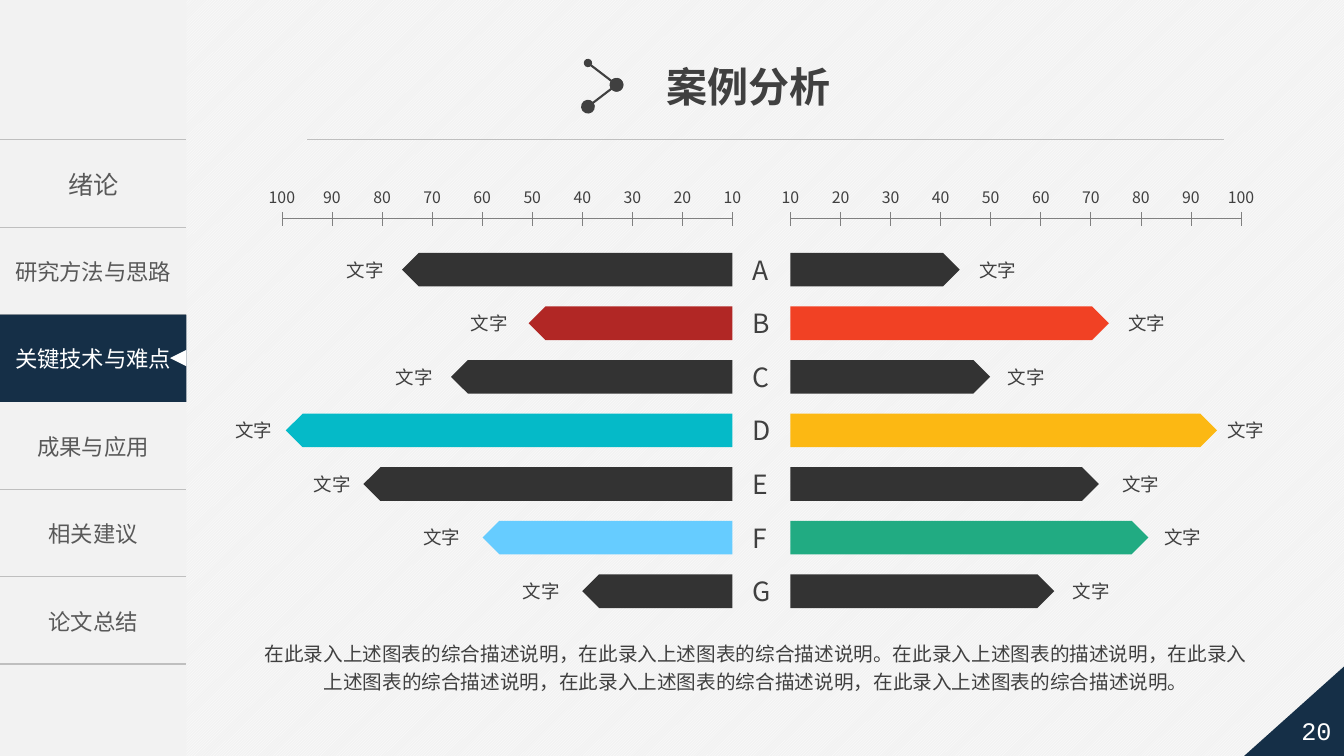
import lxml.etree
import pptx
import pptx.dml.color
import pptx.enum.dml
import pptx.enum.shapes
import pptx.enum.text
import pptx.oxml.ns
import pptx.util

SHAPES = pptx.enum.shapes.MSO_SHAPE
ALIGN = pptx.enum.text.PP_ALIGN
MIDDLE = pptx.enum.text.MSO_ANCHOR.MIDDLE
qn = pptx.oxml.ns.qn


def color(value):
    return pptx.dml.color.RGBColor.from_string(value)


class SlideBuilder:
    columns, rows = 160, 90
    font = "Noto Sans CJK SC"
    ink, gray, rule, navy = "404040", "595959", "BFBFBF", "152F47"

    def __init__(self, presentation):
        self.presentation = presentation
        self.slide = presentation.slides.add_slide(presentation.slide_layouts[6])

    def x(self, columns):
        return round(self.presentation.slide_width * columns / self.columns)

    def y(self, rows):
        return round(self.presentation.slide_height * rows / self.rows)

    def box(self, left, top, width, height):
        return self.x(left), self.y(top), self.x(width), self.y(height)

    def background(self, foreground, base):
        fill = self.slide.background.fill
        fill.patterned()
        fill.pattern = pptx.enum.dml.MSO_PATTERN.LIGHT_UPWARD_DIAGONAL
        fill.fore_color.rgb = color(foreground)
        fill.back_color.rgb = color(base)

    def set_text(self, frame, text, size, ink=None, font=None, bold=False, align=ALIGN.CENTER):
        frame.text = text
        paragraph = frame.paragraphs[0]
        paragraph.alignment = align
        run = paragraph.runs[0]
        run.font.size = pptx.util.Pt(size)
        run.font.bold = bold
        run.font.name = font or self.font
        run.font.color.rgb = color(ink or self.ink)
        east_asian = lxml.etree.SubElement(run.font._element, qn("a:ea"))
        east_asian.set("typeface", self.font)
        return paragraph

    def text(self, area, text, size, wrap=False, **style):
        frame = self.slide.shapes.add_textbox(*self.box(*area)).text_frame
        frame.word_wrap = wrap
        frame.vertical_anchor = MIDDLE
        return self.set_text(frame, text, size, **style)

    def shape(self, kind, area, fill=None, flip=False, rotation=0):
        shape = self.slide.shapes.add_shape(kind, *self.box(*area))
        shape.shadow.inherit = False
        shape.line.fill.background()
        shape.rotation = rotation
        if fill:
            shape.fill.solid()
            shape.fill.fore_color.rgb = color(fill)
        else:
            shape.fill.background()
        if flip:
            shape.element.spPr.get_or_add_xfrm().set("flipH", "1")
        return shape

    def label(self, shape, text, size, font=None):
        frame = shape.text_frame
        frame.margin_left = frame.margin_right = 0
        frame.vertical_anchor = MIDDLE
        self.set_text(frame, text, size, "FFFFFF", font)

    def line(self, start, end, ink, width, ovals=()):
        connector = self.slide.shapes.add_connector(
            pptx.enum.shapes.MSO_CONNECTOR.STRAIGHT,
            self.x(start[0]), self.y(start[1]), self.x(end[0]), self.y(end[1]))
        connector.line.color.rgb = color(ink)
        connector.line.width = pptx.util.Pt(width)
        properties = connector.element.spPr
        for tag, size in zip(("a:headEnd", "a:tailEnd"), ovals):
            lxml.etree.SubElement(properties.find(qn("a:ln")), qn(tag), type="oval", w=size, len=size)
        lxml.etree.SubElement(properties, qn("a:effectLst"))

    def border(self, cell, tag, position, visible):
        line = lxml.etree.Element(qn(tag), w=str(pptx.util.Pt(1)))
        if visible:
            fill = lxml.etree.SubElement(line, qn("a:solidFill"))
            lxml.etree.SubElement(fill, qn("a:srgbClr"), val=self.rule)
        else:
            lxml.etree.SubElement(line, qn("a:noFill"))
        cell._tc.get_or_add_tcPr().insert(position, line)

    def menu(self, area, chapters):
        table = self.slide.shapes.add_table(len(chapters), 1, *self.box(*area)).table
        table.first_row = table.horz_banding = False
        for row, (chapter, size) in enumerate(chapters):
            cell = table.cell(row, 0)
            cell.fill.background()
            cell.vertical_anchor = MIDDLE
            self.set_text(cell.text_frame, chapter, size, self.gray)
            for position, tag in enumerate(("a:lnL", "a:lnR", "a:lnT", "a:lnB")):
                self.border(cell, tag, position, tag in ("a:lnT", "a:lnB"))

    def axis(self, origin, direction, tick):
        self.line((origin, 26), (origin + direction * 9 * tick, 26), "808080", 0.5)
        for step in range(10):
            center = origin + direction * step * tick
            self.line((center, 26.9), (center, 25.2), "808080", 0.5)
            width = 5.8 if step == 9 else 4.7
            self.text((center - width / 2, 21.7, width, 3.5), str(10 * (step + 1)), 11.3)

    def bar(self, origin, direction, tick, top, value, fill, gap):
        length = (value - 10) / 10 * tick
        left = origin if direction > 0 else origin - length
        self.shape(SHAPES.PENTAGON, (left, top, length, 4), fill, flip=direction < 0)
        center = origin + direction * (length + gap)
        self.text((center - 3.4, top + 0.1, 6.8, 3.8), "文字", 13.2)


def main():
    presentation = pptx.Presentation()
    presentation.slide_width = pptx.util.Inches(13.33)
    presentation.slide_height = pptx.util.Inches(7.5)
    page = SlideBuilder(presentation)
    page.background("FFFFFF", "F2F2F2")

    sidebar, menu_top, menu_row = 22.2, 16.65, 10.4
    chapters = [("绪论", 18), ("研究方法与思路", 16), ("关键技术与难点", 16),
                ("成果与应用", 16), ("相关建议", 16), ("论文总结", 16)]
    current = 2
    current_top = menu_top + current * menu_row
    page.shape(SHAPES.RECTANGLE, (0, 0, sidebar, page.rows), "F2F2F2")
    page.menu((0, menu_top, sidebar, menu_row * len(chapters)), chapters)
    page.line((36.6, menu_top), (145.7, menu_top), page.rule, 0.5)
    highlight = page.shape(SHAPES.RECTANGLE, (0, current_top, sidebar, menu_row), page.navy)
    page.label(highlight, *chapters[current])
    page.shape(SHAPES.ISOSCELES_TRIANGLE, (20.25, current_top + 4.2, 1.95, 1.95), "FFFFFF", rotation=270)

    page.shape(SHAPES.RIGHT_TRIANGLE, (148, 79, 12.4, 11.1), page.navy, flip=True)
    page_number = page.shape(SHAPES.PENTAGON, (149.4, 83.7, 13, 6.6), flip=True)
    page.label(page_number, "20", 18, "Courier New")

    page.text((78.2, 6.7, 22.2, 7.1), "案例分析", 29.3, font="Arial", bold=True, align=ALIGN.LEFT)
    page.line((70, 7.5), (73.4, 10.1), page.ink, 1.5, ("med", "lg"))
    page.line((73.4, 10.1), (70, 12.7), page.ink, 1.5, ("lg", "lg"))
    summary = page.text(
        (29.6, 75.2, 120.8, 8),
        "在此录入上述图表的综合描述说明，在此录入上述图表的综合描述说明。"
        "在此录入上述图表的描述说明，在此录入上述图表的综合描述说明，"
        "在此录入上述图表的综合描述说明，在此录入上述图表的综合描述说明。",
        14, wrap=True)
    summary.line_spacing = 1.2

    tick, bar_top, bar_pitch = 5.96, 30.1, 6.38
    dark = "333333"
    sides = [
        (87.2, -1, [(76, dark, 4.4), (50.7, "B12725", 4.7), (66.2, dark, 4.4), (99.2, "05BAC8", 3.8),
                    (83.7, dark, 3.7), (59.9, "66CCFF", 4.9), (40, dark, 4.9)]),
        (94.1, 1, [(43.8, dark, 4.5), (73.6, "F14124", 4.5), (49.9, dark, 4.3), (95.2, "FCB813", 3.4),
                   (71.6, dark, 5), (81.5, "21AB82", 4.1), (62.7, dark, 4.4)]),
    ]
    for origin, direction, bars in sides:
        page.axis(origin, direction, tick)
        for row, (value, fill, gap) in enumerate(bars):
            page.bar(origin, direction, tick, bar_top + row * bar_pitch, value, fill, gap)
    for row, letter in enumerate("ABCDEFG"):
        page.text((88.4, bar_top - 0.5 + row * bar_pitch, 4.7, 5), letter, 18.9, align=ALIGN.LEFT)

    presentation.save("out.pptx")


if __name__ == "__main__":
    main()
